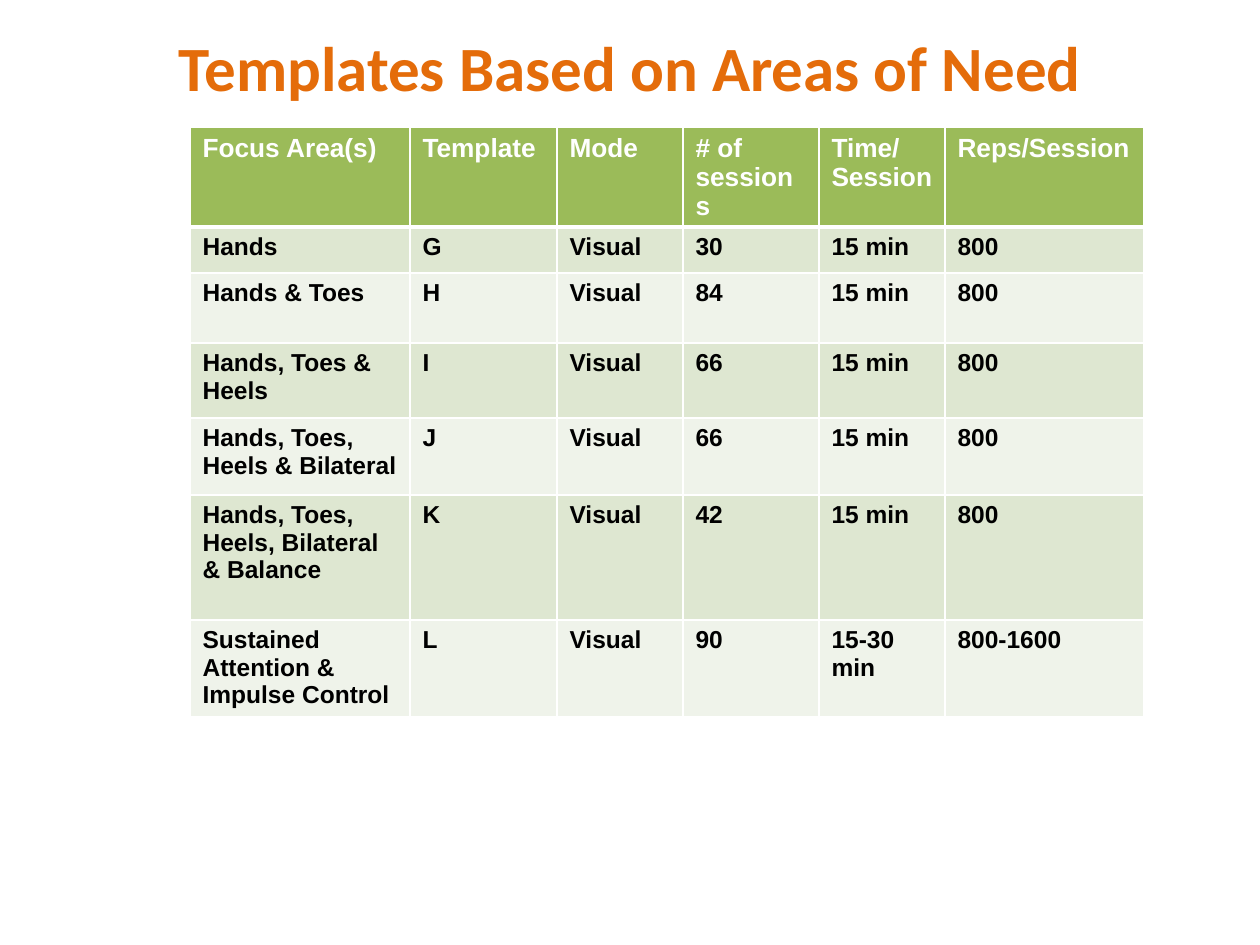
from typing import NamedTuple

from lxml import etree
from pptx import Presentation
from pptx import util as u
from pptx.dml.color import RGBColor
from pptx.enum import text
from pptx.oxml.ns import qn

PX_PER_INCH = 126
WHITE, BLACK, ORANGE = "FFFFFF", "000000", "E46C0A"
HEADER_GREEN, BANDS = "9BBB59", ("DEE7D1", "EFF3EA")


class Training(NamedTuple):
    focus: str
    template: str
    sessions: str
    time: str = "15 min"
    reps: str = "800"
    mode: str = "Visual"

    def cells(self) -> tuple[str, ...]:
        return (self.focus, self.template, self.mode,
                self.sessions, self.time, self.reps)


class CellStyle(NamedTuple):
    fill: str
    color: str
    size: int
    bottom_line: int


HEADINGS = ("Focus Area(s)", "Template", "Mode",
            "# of sessions", "Time/Session", "Reps/Session")
TRAININGS = (
    Training("Hands", "G", "30"),
    Training("Hands & Toes", "H", "84"),
    Training("Hands, Toes & Heels", "I", "66"),
    Training("Hands, Toes, Heels & Bilateral", "J", "66"),
    Training("Hands, Toes, Heels, Bilateral & Balance", "K", "42"),
    Training("Sustained Attention & Impulse Control", "L", "90",
             "15-30 min", "800-1600"),
)
COLUMN_WIDTHS = (220, 147, 126, 136, 126, 199)
ROW_HEIGHTS = (100, 46, 70, 75, 77, 125, 97)


def px(length: int) -> u.Emu:
    return u.Emu(round(length * 914400 / PX_PER_INCH))


def rgb(value: str) -> RGBColor:
    return RGBColor.from_string(value)


def style_text(frame, font_name: str, size: int, color: str) -> None:
    for para in frame.paragraphs:
        for span in para.runs:
            span.font.name = font_name
            span.font.size = u.Pt(size)
            span.font.bold = True
            span.font.color.rgb = rgb(color)


def add_borders(cell, bottom_line: int) -> None:
    properties = cell._tc.get_or_add_tcPr()
    widths = {"a:lnL": 1, "a:lnR": 1, "a:lnT": 1, "a:lnB": bottom_line}
    for position, (tag, width) in enumerate(widths.items()):
        line = etree.Element(qn(tag), w=str(u.Pt(width)))
        fill = etree.SubElement(line, qn("a:solidFill"))
        etree.SubElement(fill, qn("a:srgbClr"), val=WHITE)
        properties.insert(position, line)  # borders precede the fill


def fill_cell(cell, content: str, style: CellStyle) -> None:
    cell.text_frame.text = content
    style_text(cell.text_frame, "Arial", style.size, style.color)
    cell.fill.solid()
    cell.fill.fore_color.rgb = rgb(style.fill)
    add_borders(cell, style.bottom_line)


def add_title(page) -> None:
    title = page.shapes.title
    title.left, title.top, title.width, title.height = map(px, (58, 48, 1144, 36))
    frame = title.text_frame
    frame.text = "Templates Based on Areas of Need"
    frame.auto_size = text.MSO_AUTO_SIZE.NONE
    frame.vertical_anchor = text.MSO_ANCHOR.MIDDLE
    frame.paragraphs[0].alignment = text.PP_ALIGN.CENTER
    style_text(frame, "Calibri", 36, ORANGE)


def add_training_table(page) -> None:
    rows = [HEADINGS, *(training.cells() for training in TRAININGS)]
    table = page.shapes.add_table(
        len(rows), len(HEADINGS), px(190), px(127),
        px(sum(COLUMN_WIDTHS)), px(sum(ROW_HEIGHTS))).table
    for column, width in zip(table.columns, COLUMN_WIDTHS):
        column.width = px(width)
    for row, height in zip(table.rows, ROW_HEIGHTS):
        row.height = px(height)

    header = CellStyle(HEADER_GREEN, WHITE, 15, 3)
    bands = [CellStyle(fill, BLACK, 14, 1) for fill in BANDS]
    for index, (row, contents) in enumerate(zip(table.rows, rows)):
        style = bands[(index - 1) % 2] if index else header
        for cell, content in zip(row.cells, contents):
            fill_cell(cell, content, style)


def main() -> None:
    deck = Presentation()
    deck.slide_width, deck.slide_height = u.Inches(10), u.Inches(7.5)
    page = deck.slides.add_slide(deck.slide_layouts[5])  # title only
    add_title(page)
    add_training_table(page)
    deck.save("out.pptx")


if __name__ == "__main__":
    main()
